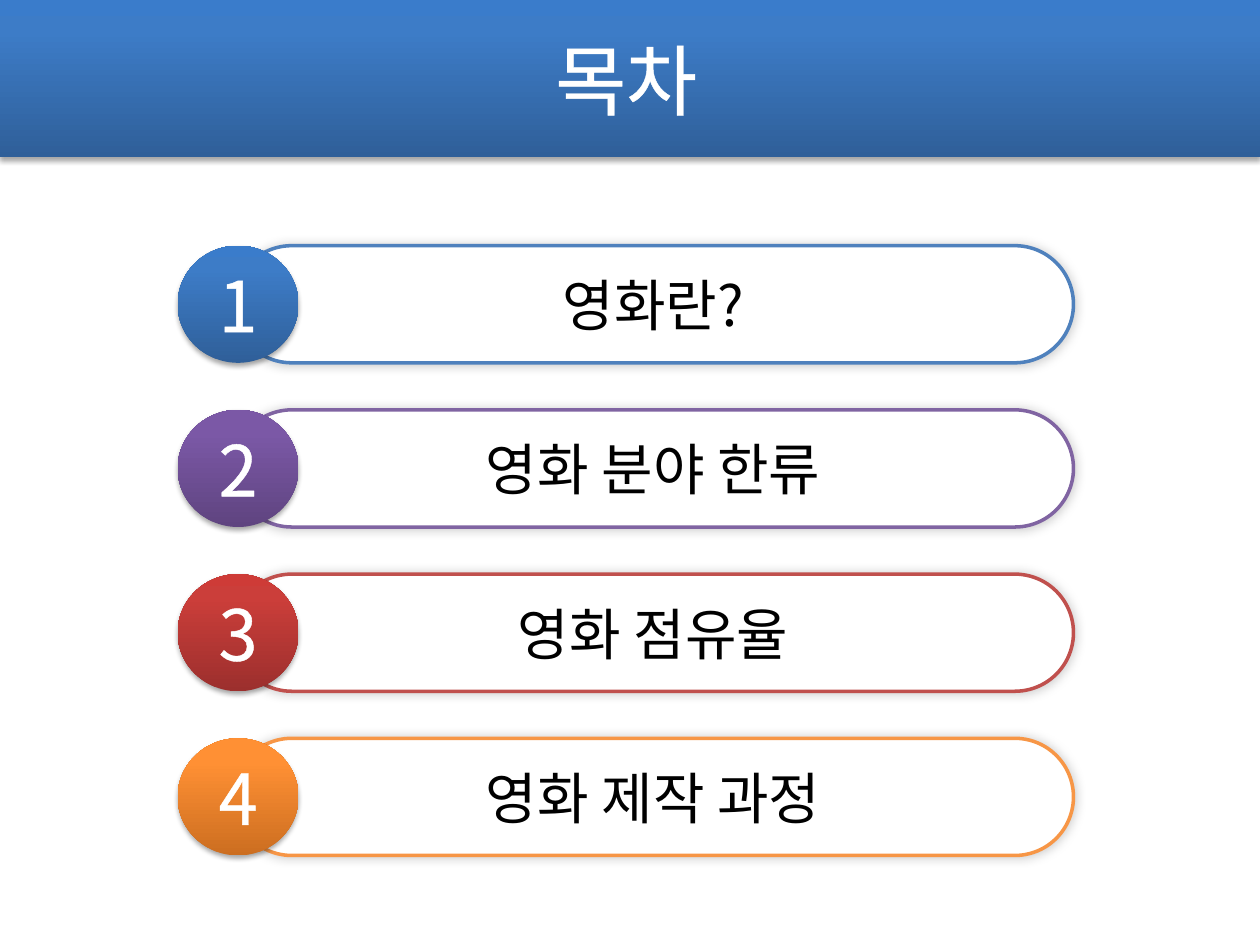
from copy import deepcopy

from lxml import etree
from pptx import Presentation
from pptx.dml.color import RGBColor
from pptx.enum.shapes import MSO_SHAPE
from pptx.enum.text import MSO_ANCHOR, PP_ALIGN
from pptx.oxml.ns import qn
from pptx.util import Inches, Pt

RECTANGLE = MSO_SHAPE.RECTANGLE
ROUNDED = MSO_SHAPE.ROUNDED_RECTANGLE
OVAL = MSO_SHAPE.OVAL
MIDDLE = MSO_ANCHOR.MIDDLE
CENTER = PP_ALIGN.CENTER

FONT = "Noto Sans CJK KR"
WHITE, BLACK = "FFFFFF", "000000"
STOP_POSITIONS = (0, 0.8, 1)
BLUE_GRADIENT = ("2F5F99", "3D7CC7", "3A7CCB")

# Opacity in percent, blur and distance in points, direction in degrees
DROP_SHADOW = (35, 3.1, 1.8, 90)
SOFT_SHADOW = (20, 6, 0, 315)

# Agenda entries: text, border colour, badge gradient from bottom to top
ENTRIES = [
    ("영화란?", "4F81BD", BLUE_GRADIENT),
    ("영화 분야 한류", "8064A2", ("5F4480", "7B58A6", "7C57A8")),
    ("영화 점유율", "C0504D", ("9C2F2D", "CB3E3A", "CE3B37")),
    ("영화 제작 과정", "F79646", ("CC6E20", "FF9034", "FF9136")),
]
FIRST_TOP, LAST_TOP, ROW_HEIGHT = 1.95, 5.86, 0.93


def rgb(color):
    return RGBColor.from_string(color)


def add_color(parent, color):
    fill = etree.SubElement(parent, qn("a:solidFill"))
    return etree.SubElement(fill, qn("a:srgbClr"), val=color)


def add_shadow(shape, opacity, blur, distance, direction):
    shape.shadow.inherit = False
    effects = shape._element.spPr.find(qn("a:effectLst"))
    shadow = etree.SubElement(
        effects, qn("a:outerShdw"), blurRad=str(Pt(blur)), dist=str(Pt(distance)),
        dir=str(direction * 60000), algn="ctr", rotWithShape="0")
    color = etree.SubElement(shadow, qn("a:srgbClr"), val=BLACK)
    etree.SubElement(color, qn("a:alpha"), val=str(opacity * 1000))


def fill_gradient(shape, colors):
    shape.fill.gradient()
    shape.fill.gradient_angle = 90
    stop_list = shape._element.spPr.find(".//" + qn("a:gsLst"))
    stop_list.append(deepcopy(stop_list[0]))
    for stop, position, color in zip(shape.fill.gradient_stops, STOP_POSITIONS, colors):
        stop.position = position
        stop.color.rgb = rgb(color)


def write_text(shape, text, size, color, outlined=False):
    frame = shape.text_frame
    frame.word_wrap = True
    frame.vertical_anchor = MIDDLE
    paragraph = frame.paragraphs[0]
    paragraph.alignment = CENTER
    run = paragraph.add_run()
    run.text = text
    run.font.size = Pt(size)
    run.font.name = FONT
    run.font.color.rgb = rgb(color)
    properties = run.font._element
    etree.SubElement(properties, qn("a:ea"), typeface=FONT)
    if outlined:
        outline = etree.Element(qn("a:ln"), w=str(Pt(1.45)))
        add_color(outline, color)
        properties.insert(0, outline)


def add_gradient_shape(slide, kind, left, top, width, height, colors):
    shape = slide.shapes.add_shape(
        kind, Inches(left), Inches(top), Inches(width), Inches(height))
    fill_gradient(shape, colors)
    shape.line.fill.background()
    add_shadow(shape, *DROP_SHADOW)
    return shape


def add_header(slide, text):
    add_gradient_shape(slide, RECTANGLE, 0, 0, 10, 1.25, BLUE_GRADIENT)
    title = slide.shapes.title
    title.left, title.top = Inches(0.47), Inches(0)
    title.width, title.height = Inches(9), Inches(1.25)
    write_text(title, text, 44, WHITE, outlined=True)
    # Bring the title in front of the band
    slide.shapes._spTree.append(title._element)


def add_bar(slide, top, text, border):
    bar = slide.shapes.add_shape(
        ROUNDED, Inches(1.85), Inches(top), Inches(6.67), Inches(ROW_HEIGHT))
    bar.adjustments[0] = 0.5
    bar.fill.solid()
    bar.fill.fore_color.rgb = rgb(WHITE)
    bar.line.color.rgb = rgb(border)
    bar.line.width = Pt(2)
    add_shadow(bar, *SOFT_SHADOW)
    write_text(bar, text, 32, BLACK)


def add_badge(slide, top, number, colors):
    badge = add_gradient_shape(slide, OVAL, 1.41, top, 0.96, ROW_HEIGHT, colors)
    write_text(badge, str(number), 40, WHITE, outlined=True)


def main():
    presentation = Presentation()
    presentation.slide_width = Inches(10)
    presentation.slide_height = Inches(7.5)
    slide = presentation.slides.add_slide(presentation.slide_layouts[5])

    add_header(slide, "목차")

    # Evenly spaced agenda rows
    pitch = (LAST_TOP - FIRST_TOP) / (len(ENTRIES) - 1)
    for index, (text, border, colors) in enumerate(ENTRIES):
        top = FIRST_TOP + index * pitch
        add_bar(slide, top, text, border)
        add_badge(slide, top, index + 1, colors)

    presentation.save("out.pptx")


if __name__ == "__main__":
    main()
